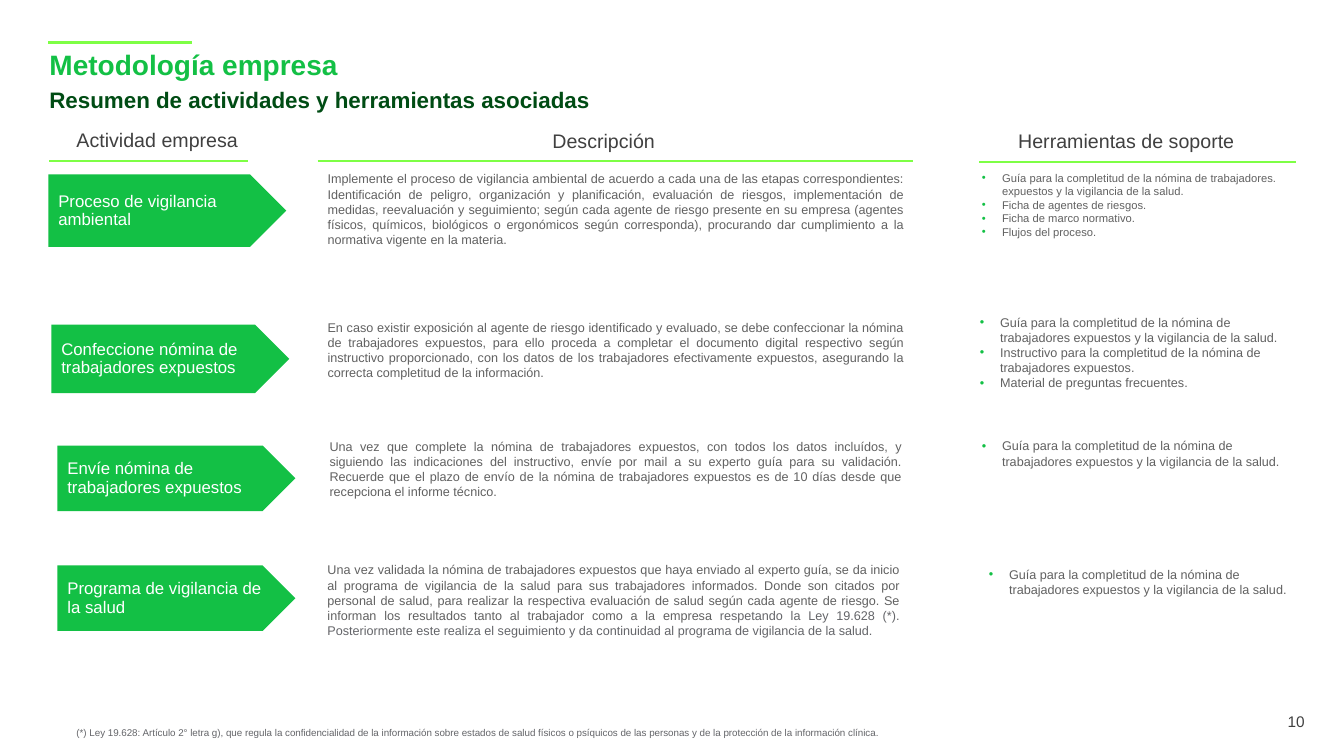
from lxml import etree
from pptx import Presentation
from pptx.dml.color import RGBColor
from pptx.enum.shapes import MSO_CONNECTOR, MSO_SHAPE
from pptx.enum.text import MSO_ANCHOR, PP_ALIGN
from pptx.oxml.ns import qn
from pptx.util import Inches, Pt

PLATE, STRAIGHT = MSO_SHAPE.PENTAGON, MSO_CONNECTOR.STRAIGHT
TOP, MIDDLE = MSO_ANCHOR.TOP, MSO_ANCHOR.MIDDLE
LEFT, CENTER, JUSTIFY = PP_ALIGN.LEFT, PP_ALIGN.CENTER, PP_ALIGN.JUSTIFY
GREEN, LIME, DARK = "13C045", "7EFF45", "004C14"
INK, GRAY, SLATE, WHITE = "404040", "616161", "646569", "FFFFFF"

TITLE = "Metodología empresa"
SUBTITLE = "Resumen de actividades y herramientas asociadas"
PAGE = "10"
NOTE = ("(*) Ley 19.628: Artículo 2° letra g), que regula la confidencialidad de la "
        "información sobre estados de salud físicos o psíquicos de las personas y de la "
        "protección de la información clínica.")
GUIDE = ("Guía para la completitud de la nómina de trabajadores expuestos y la "
         "vigilancia de la salud.")

# heading, text box (left, top, width), rule (left, right, y)
HEADS = [
    ("Actividad empresa", (0.66, 1.25, 2.19), (0.49, 2.46, 1.6)),
    ("Descripción", (5.38, 1.26, 2.19), (3.15, 9.06, 1.6)),
    ("Herramientas de soporte", (10, 1.26, 2.56), (9.71, 12.85, 1.61)),
]

# each cell: content, box (left, top, width, height); tools end with a text size
ROWS = [
    (("Proceso de vigilancia ambiental", (0.48, 1.73, 2.36, 0.72)),
     (["Implemente el proceso de vigilancia ambiental de acuerdo a cada una de las etapas "
       "correspondientes: Identificación de peligro, organización y planificación, "
       "evaluación de riesgos, implementación de medidas, reevaluación y seguimiento; "
       "según cada agente de riesgo presente en su empresa (agentes físicos, químicos, "
       "biológicos o ergonómicos según corresponda), procurando dar cumplimiento a la "
       "normativa vigente en la materia."], (3.15, 1.65, 5.91, 0.86)),
     (["Guía para la completitud de la nómina de trabajadores. expuestos y la vigilancia "
       "de la salud.", "Ficha de agentes de riesgos.", "Ficha de marco normativo.",
       "Flujos del proceso."], (9.64, 1.65, 3.41, 0.77), 8)),
    (("Confeccione nómina de trabajadores expuestos", (0.51, 3.22, 2.36, 0.68)),
     (["En caso existir exposición al agente de riesgo identificado y evaluado, se debe "
       "confeccionar la nómina de trabajadores expuestos, para ello proceda a completar el "
       "documento digital respectivo según instructivo proporcionado, con los datos de los "
       "trabajadores efectivamente expuestos, asegurando la correcta completitud de la "
       "información."], (3.15, 3.12, 5.91, 0.71)),
     ([GUIDE, "Instructivo para la completitud de la nómina de trabajadores expuestos.",
       "Material de preguntas frecuentes."], (9.62, 3.07, 3.41, 1.01), 9)),
    (("Envíe nómina de trabajadores expuestos", (0.57, 4.42, 2.36, 0.65)),
     (["Una vez que complete la nómina de trabajadores expuestos, con todos los datos "
       "incluídos, y siguiendo las indicaciones del instructivo, envíe por mail a su "
       "experto guía para su validación. Recuerde que el plazo de envío de la nómina de "
       "trabajadores expuestos es de 10 días desde que recepciona el informe técnico."],
      (3.17, 4.3, 5.87, 0.71)),
     ([GUIDE], (9.64, 4.3, 3.41, 0.4), 9)),
    (("Programa de vigilancia de la salud", (0.57, 5.61, 2.36, 0.65)),
     (["Una vez validada la nómina de trabajadores expuestos que haya enviado al experto "
       "guía, se da inicio al programa de vigilancia de la salud para sus trabajadores "
       "informados. Donde son citados por personal de salud, para realizar la respectiva "
       "evaluación de salud según cada agente de riesgo. Se informan los resultados tanto "
       "al trabajador como a la empresa ",
       "respetando la Ley 19.628 (*). Posteriormente este realiza el seguimiento y da "
       "continuidad al programa de vigilancia de la salud."], (3.15, 5.53, 5.87, 0.86)),
     ([GUIDE], (9.71, 5.57, 3.41, 0.4), 9)),
]


def rgb(code):
    return RGBColor.from_string(code)


def style(run, size, color, bold=False):
    font = run.font
    font.name, font.size, font.bold = "Arial", Pt(size), bold
    font.color.rgb = rgb(color)


def fill(shape, lines, size, color, bold=False, align=LEFT, space=1.0,
         anchor=TOP, inset=None):
    """Put one paragraph per line in the shape and format it."""
    frame = shape.text_frame
    frame.text = "\n".join(lines)
    frame.word_wrap = True
    frame.vertical_anchor = anchor
    if inset is not None:
        frame.margin_left = frame.margin_right = Inches(inset)
        frame.margin_top = frame.margin_bottom = Inches(inset)
    for para in frame.paragraphs:
        para.alignment, para.line_spacing = align, space
        for run in para.runs:
            style(run, size, color, bold)
    return frame


def box(place):
    return slide.shapes.add_textbox(*map(Inches, place))


def rule(left, right, y, width):
    line = slide.shapes.add_connector(
        STRAIGHT, Inches(left), Inches(y), Inches(right), Inches(y))
    line.line.color.rgb = rgb(LIME)
    line.line.width = Pt(width)
    etree.SubElement(line._element.spPr, qn("a:effectLst"))


def bullet(para):
    props = para._p.get_or_add_pPr()
    props.set("marL", str(Inches(0.2)))
    props.set("indent", str(-Inches(0.2)))
    tint = etree.SubElement(props, qn("a:buClr"))
    etree.SubElement(tint, qn("a:srgbClr")).set("val", GREEN)
    etree.SubElement(props, qn("a:buFont")).set("typeface", "Arial")
    etree.SubElement(props, qn("a:buChar")).set("char", "•")


deck = Presentation()
deck.slide_width, deck.slide_height = Inches(13.33), Inches(7.5)
slide = deck.slides.add_slide(deck.slide_layouts[5])

rule(0.48, 1.9, 0.42, 2)
title = slide.shapes.title
title.left, title.top = Inches(0.49), Inches(0.51)
title.width, title.height = Inches(9.13), Inches(0.31)
fill(title, [TITLE], 20, GREEN, bold=True, space=0.9, inset=0)
fill(box((0.49, 0.88, 9.13, 0.31)), [SUBTITLE], 16, DARK, bold=True, space=0.9, inset=0)

for head, place, span in HEADS:
    rule(*span, 1.25)
    fill(box((*place, 0.24)), [head], 14, INK, space=0.9)

for (step, spot), (parts, area), (tools, place, size) in ROWS:
    plate = slide.shapes.add_shape(PLATE, *map(Inches, spot))
    plate.shadow.inherit = False
    plate.fill.solid()
    plate.fill.fore_color.rgb = rgb(GREEN)
    plate.line.fill.background()
    fill(plate, [step], 12, WHITE, space=Pt(13), anchor=MIDDLE)

    para = fill(box(area), parts[:1], 9, GRAY, align=JUSTIFY).paragraphs[0]
    for part in parts[1:]:
        run = para.add_run()
        run.text = part
        style(run, 9, SLATE)

    for para in fill(box(place), tools, size, GRAY).paragraphs:
        bullet(para)

fill(box((0.66, 7.17, 10.75, 0.21)), [NOTE], 7, SLATE, space=0.9)
fill(box((12.65, 7.03, 0.41, 0.26)), [PAGE], 11, INK, align=CENTER, anchor=MIDDLE, inset=0)

deck.save("out.pptx")
